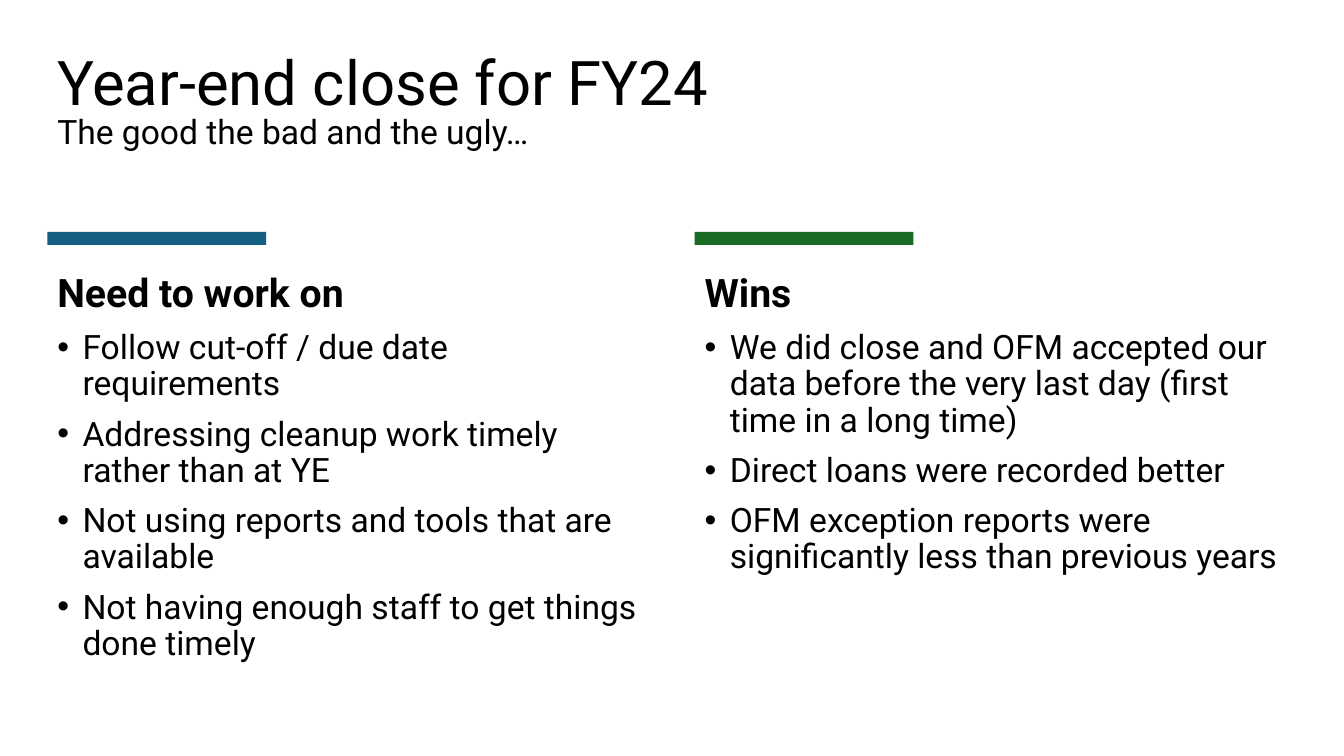
from lxml import etree
from pptx import Presentation
from pptx.dml.color import RGBColor
from pptx.enum.shapes import MSO_SHAPE
from pptx.enum.text import MSO_ANCHOR
from pptx.oxml.ns import qn
from pptx.util import Inches, Pt

RECTANGLE = MSO_SHAPE.RECTANGLE
TOP = MSO_ANCHOR.TOP

COLORS = {"text": "000000", "blue": "156082", "green": "196B24"}
FONT = "Roboto"
LEFT, CONTENT_WIDTH = 0.47, 12.4
COLUMN_WIDTH, COLUMN_GAP = 5.98, 0.44
COLUMN_TOP, COLUMN_HEIGHT = 2.3, 4.1

COLUMNS = [
    ("Need to work on", "blue", [
        "Follow cut-off / due date requirements",
        "Addressing cleanup work timely rather than at YE",
        "Not using reports and tools that are available",
        "Not having enough staff to get things done timely",
    ]),
    ("Wins", "green", [
        "We did close and OFM accepted our data before the very last day "
        "(first time in a long time)",
        "Direct loans were recorded better",
        "OFM exception reports were significantly less than previous years",
    ]),
]


def add_bullet(paragraph):
    """Give a paragraph a hanging round bullet."""
    properties = paragraph._p.get_or_add_pPr()
    properties.set("marL", str(Inches(0.25)))
    properties.set("indent", str(Inches(-0.25)))
    etree.SubElement(properties, qn("a:buFont")).set("typeface", "Arial")
    etree.SubElement(properties, qn("a:buChar")).set("char", "•")


def add_text(slide, box, lines, size, bold=False, before=10, bulleted=False):
    """Place lines of text, one paragraph each, in a box."""
    frame = slide.shapes.add_textbox(*map(Inches, box)).text_frame
    for name, value in {"word_wrap": True, "vertical_anchor": TOP}.items():
        setattr(frame, name, value)
    font_format = {"name": FONT, "size": Pt(size), "bold": bold}
    spacing = {"line_spacing": 0.9, "space_before": Pt(before)}
    for index, line in enumerate(lines):
        paragraph = frame.add_paragraph() if index else frame.paragraphs[0]
        for name, value in spacing.items():
            setattr(paragraph, name, value)
        if bulleted:
            add_bullet(paragraph)
        run = paragraph.add_run()
        run.text = line
        for name, value in font_format.items():
            setattr(run.font, name, value)
        run.font.color.rgb = RGBColor.from_string(COLORS["text"])


def add_header(slide, left, top, width):
    """Place the title and the subtitle below it."""
    add_text(slide, (left, top, width, 0.68), ["Year-end close for FY24"], 44, before=0)
    add_text(slide, (left, top + 0.63, width, 0.39), ["The good the bad and the ugly…"], 24)


def add_column(slide, box, heading, accent, points):
    """Place an accent bar, a heading and bullet points in a box."""
    left, top, width, height = box
    bar = slide.shapes.add_shape(RECTANGLE, *map(Inches, (left, top, 2.17, 0.13)))
    bar.shadow.inherit = False
    bar.fill.solid()
    bar.fill.fore_color.rgb = RGBColor.from_string(COLORS[accent])
    bar.line.fill.background()
    add_text(slide, (left, top + 0.37, width, 0.39), [heading], 28, bold=True)
    add_text(slide, (left, top + 0.93, width, height - 0.93), points, 24, bulleted=True)


def main():
    """Build the slide and save it."""
    deck = Presentation()
    deck.slide_width, deck.slide_height = Inches(13.33), Inches(7.5)
    slide = deck.slides.add_slide(deck.slide_layouts[6])
    add_header(slide, LEFT, 0.47, CONTENT_WIDTH)
    for index, column in enumerate(COLUMNS):
        left = LEFT + index * (COLUMN_WIDTH + COLUMN_GAP)
        add_column(slide, (left, COLUMN_TOP, COLUMN_WIDTH, COLUMN_HEIGHT), *column)
    deck.save("out.pptx")


if __name__ == "__main__":
    main()
